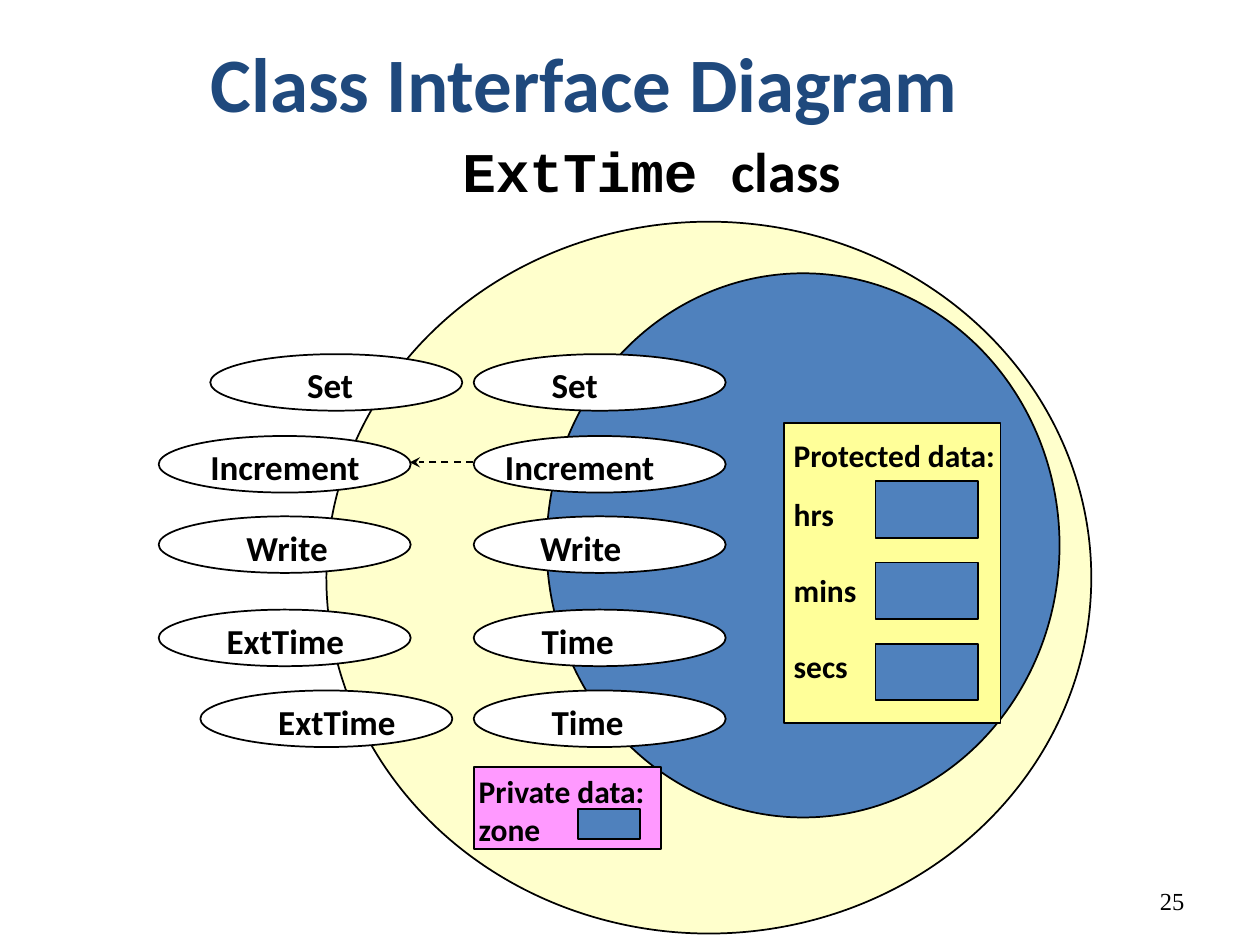
from lxml import etree
from pptx import Presentation
from pptx import util as u
from pptx.dml.color import RGBColor
from pptx.enum import dml, shapes, text
from pptx.oxml.ns import qn


def colour(value):
    return RGBColor.from_string(value)


class Diagram:
    font = "Calibri"
    ink = "000000"
    blue = "4F81BD"

    def __init__(self, deck):
        self.page = deck.slides.add_slide(deck.slide_layouts[5])

    def style(self, font, size, ink=ink, name=font, bold=True):
        font.name, font.size, font.bold = name, u.Pt(size), bold
        font.color.rgb = colour(ink)

    def fit(self, frame):
        frame.word_wrap = False
        frame.auto_size = text.MSO_AUTO_SIZE.SHAPE_TO_FIT_TEXT
        frame.vertical_anchor = text.MSO_ANCHOR.TOP

    def title(self, words, left, top, width, height):
        box = self.page.shapes.title
        box.left, box.top = u.Cm(left), u.Cm(top)
        box.width, box.height = u.Cm(width), u.Cm(height)
        box.text_frame.text = words
        self.fit(box.text_frame)
        para = box.text_frame.paragraphs[0]
        para.alignment = text.PP_ALIGN.LEFT
        self.style(para.font, 44, "1F497D")

    def label(self, lines, left, top, width, height, size=20, gaps=()):
        box = self.page.shapes.add_textbox(
            u.Cm(left), u.Cm(top), u.Cm(width), u.Cm(height))
        frame = box.text_frame
        frame.text = lines
        self.fit(frame)
        for para in frame.paragraphs:
            self.style(para.font, size)
        for para, gap in zip(frame.paragraphs, gaps):
            para.space_before = u.Pt(gap)
        return frame

    def shape(self, kind, fill, left, top, width, height):
        box = self.page.shapes.add_shape(
            kind, u.Cm(left), u.Cm(top), u.Cm(width), u.Cm(height))
        box.shadow.inherit = False
        box.fill.solid()
        box.fill.fore_color.rgb = colour(fill)
        box.line.color.rgb = colour(self.ink)
        box.line.width = u.Pt(1)

    def oval(self, fill, *place):
        self.shape(shapes.MSO_SHAPE.OVAL, fill, *place)

    def box(self, fill, *place):
        self.shape(shapes.MSO_SHAPE.RECTANGLE, fill, *place)

    def arrow(self, start, end, level):
        arrow = self.page.shapes.add_connector(
            shapes.MSO_CONNECTOR.STRAIGHT,
            u.Cm(start), u.Cm(level), u.Cm(end), u.Cm(level))
        arrow.line.color.rgb = colour(self.ink)
        arrow.line.width = u.Pt(1)
        arrow.line.dash_style = dml.MSO_LINE.DASH
        etree.SubElement(arrow.line._get_or_add_ln(), qn("a:tailEnd"), type="stealth")
        etree.SubElement(arrow._element.spPr, qn("a:effectLst"))


def main():
    deck = Presentation()
    deck.slide_width, deck.slide_height = u.Cm(25.4), u.Cm(19.05)
    diagram = Diagram(deck)

    number = diagram.label("25", 18.21, 17.65, 5.92, 1.02)
    number.word_wrap = True
    number.auto_size = text.MSO_AUTO_SIZE.NONE
    number.vertical_anchor = text.MSO_ANCHOR.MIDDLE
    para = number.paragraphs[0]
    para.alignment = text.PP_ALIGN.RIGHT
    diagram.style(para.font, 14, name="Times New Roman", bold=False)

    diagram.oval("FFFFCC", 6.58, 4.47, 15.42, 14.35)
    diagram.oval(diagram.blue, 11.02, 5.51, 10.34, 10.97)
    diagram.box("FFFF99", 15.8, 8.53, 4.37, 6.05)
    diagram.title("Class Interface Diagram", 3.99, 0.58, 16.71, 2.11)
    diagram.label("Protected data:\nhrs\nmins\nsecs", 15.75, 8.66, 4.7, 5.26,
                  size=18, gaps=(0, 12, 22, 22))
    for row in range(3):
        diagram.box(diagram.blue, 17.65, 9.7 + 1.64 * row, 2.06, 1.14)

    heading = diagram.label("", 9.07, 2.62, 8.15, 1.6, size=32).paragraphs[0]
    for words, name in (("ExtTime ", "Courier New"), ("class", "Calibri")):
        span = heading.add_run()
        span.text = words
        diagram.style(span.font, 32, name=name)

    widths = {"Set": 1.45, "Increment": 3.63, "Write": 2.26,
              "Time": 2.08, "ExtTime": 3.12}
    tops = (7.14, 8.79, 10.41, 12.29, 13.92)
    base_methods = (("Set", 9.55, 10.87), ("Increment", 9.55, 9.93),
                    ("Write", 9.55, 10.64), ("Time", 9.55, 10.67),
                    ("Time", 9.55, 10.87))
    derived_methods = (("Set", 4.24, 5.94), ("Increment", 3.2, 3.99),
                       ("Write", 3.2, 4.72), ("ExtTime", 3.2, 4.32),
                       ("ExtTime", 4.04, 5.36))
    for methods in (base_methods, derived_methods):
        for top, (name, oval_left, label_left) in zip(tops, methods):
            diagram.oval("FFFFFF", oval_left, top, 5.08, 1.14)
            diagram.label(name, label_left, top + 0.07, widths[name], 1.09)
    diagram.arrow(9.53, 8.26, 9.32)

    diagram.box("FF99FF", 9.55, 15.47, 3.78, 1.65)
    diagram.label("Private data:\nzone", 9.4, 15.44, 4.06, 1.78, size=18)
    diagram.box(diagram.blue, 11.66, 16.31, 1.24, 0.61)
    deck.save("out.pptx")


if __name__ == "__main__":
    main()
